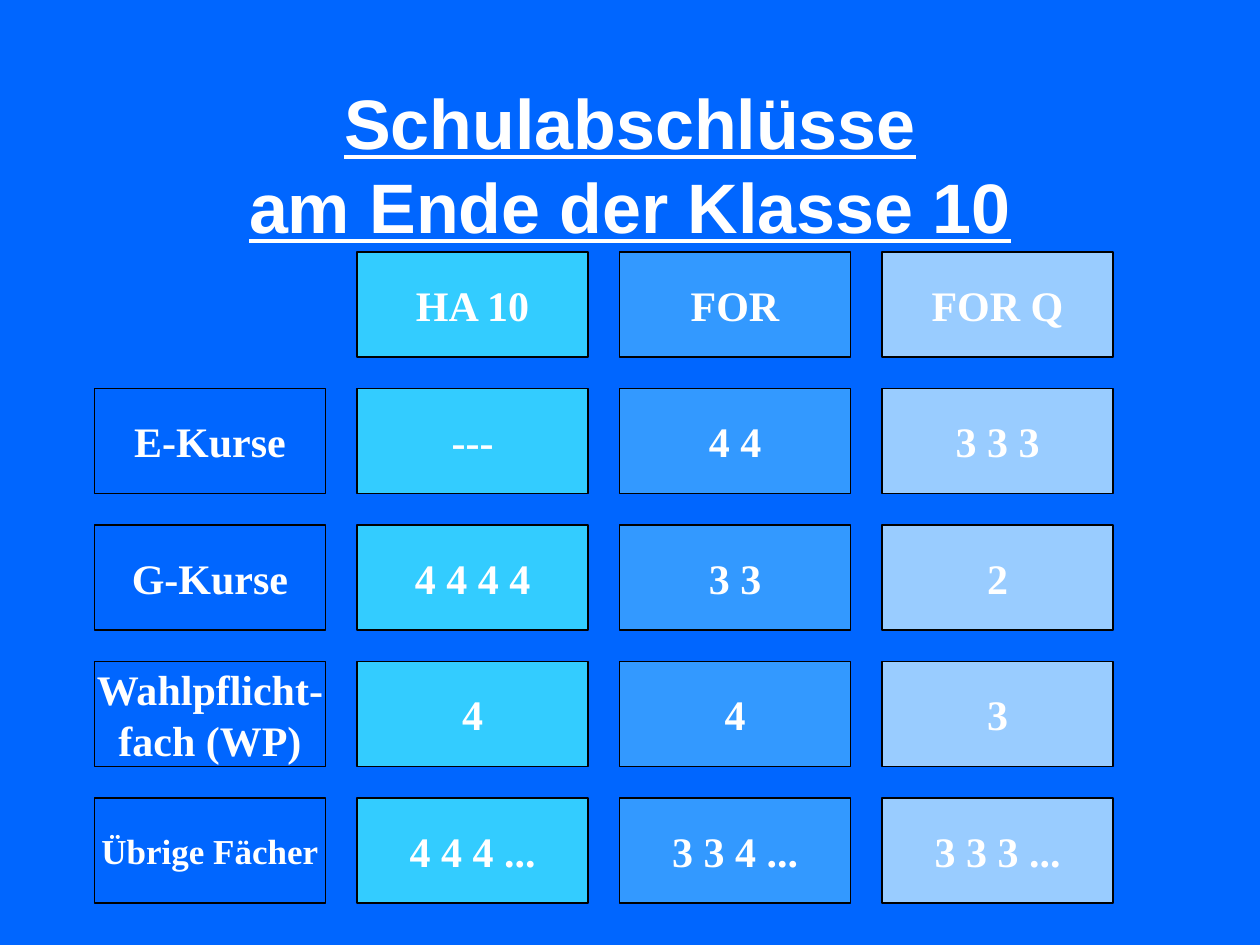
import dataclasses

import pptx
import pptx.dml.color
import pptx.enum.shapes
import pptx.enum.text
import pptx.util

Inches = pptx.util.Inches
WIDE, HIGH, GAP = 11 / 6, 5 / 6, 0.25
LEFT, TOP = 0.75, 2
BACK, WHITE, BLACK = "0066FF", "FFFFFF", "000000"


@dataclasses.dataclass
class Cell:
    lines: tuple[str, ...]
    size: int = 24


@dataclasses.dataclass
class Column:
    fill: str
    first: int
    cells: list[Cell]


COLUMNS = [
    Column(BACK, 1, [Cell(("E-Kurse",)), Cell(("G-Kurse",)),
                     Cell(("Wahlpflicht-", "fach (WP)")),
                     Cell(("Übrige Fächer",), 20)]),
    Column("33CCFF", 0, [Cell((text,)) for text in
                         ("HA 10", "---", "4 4 4 4", "4", "4 4 4 ...")]),
    Column("3399FF", 0, [Cell((text,)) for text in
                         ("FOR", "4 4", "3 3", "4", "3 3 4 ...")]),
    Column("99CCFF", 0, [Cell((text,)) for text in
                         ("FOR Q", "3 3 3", "2", "3", "3 3 3 ...")]),
]


def color(code: str) -> pptx.dml.color.RGBColor:
    return pptx.dml.color.RGBColor.from_string(code)


def write(shape, lines: tuple[str, ...], wrap: bool, style: dict) -> None:
    frame = shape.text_frame
    frame.word_wrap = wrap
    frame.vertical_anchor = pptx.enum.text.MSO_ANCHOR.MIDDLE
    for index, line in enumerate(lines):
        para = frame.add_paragraph() if index else frame.paragraphs[0]
        para.text = line
        para.alignment = pptx.enum.text.PP_ALIGN.CENTER
        for run in para.runs:
            run.font.color.rgb = color(WHITE)
            for name, value in style.items():
                setattr(run.font, name, value)


def draw(slide, cell: Cell, fill: str, col: int, row: int) -> None:
    box = slide.shapes.add_shape(
        pptx.enum.shapes.MSO_SHAPE.RECTANGLE,
        Inches(LEFT + col * (WIDE + GAP)), Inches(TOP + row * (HIGH + GAP)),
        Inches(WIDE), Inches(HIGH))
    box.shadow.inherit = False
    box.fill.solid()
    box.fill.fore_color.rgb = color(fill)
    box.line.color.rgb = color(BLACK)
    box.line.width = pptx.util.Pt(0.75)
    write(box, cell.lines, False, {
        "name": "Times New Roman", "size": pptx.util.Pt(cell.size), "bold": True})


def main() -> None:
    """Build the slide of school certificates and the grades they need."""
    deck = pptx.Presentation()
    deck.slide_width, deck.slide_height = Inches(10), Inches(7.5)
    slide = deck.slides.add_slide(deck.slide_layouts[6])
    slide.background.fill.solid()
    slide.background.fill.fore_color.rgb = color(BACK)
    title = slide.shapes.add_textbox(
        Inches(LEFT), Inches(0.67), Inches(8.5), Inches(1.25))
    write(title, ("Schulabschlüsse\nam Ende der Klasse 10",), True, {
        "name": "Arial", "size": pptx.util.Pt(40), "bold": True, "underline": True})
    for col, column in enumerate(COLUMNS):
        for row, cell in enumerate(column.cells, column.first):
            draw(slide, cell, column.fill, col, row)
    deck.save("out.pptx")


if __name__ == "__main__":
    main()
